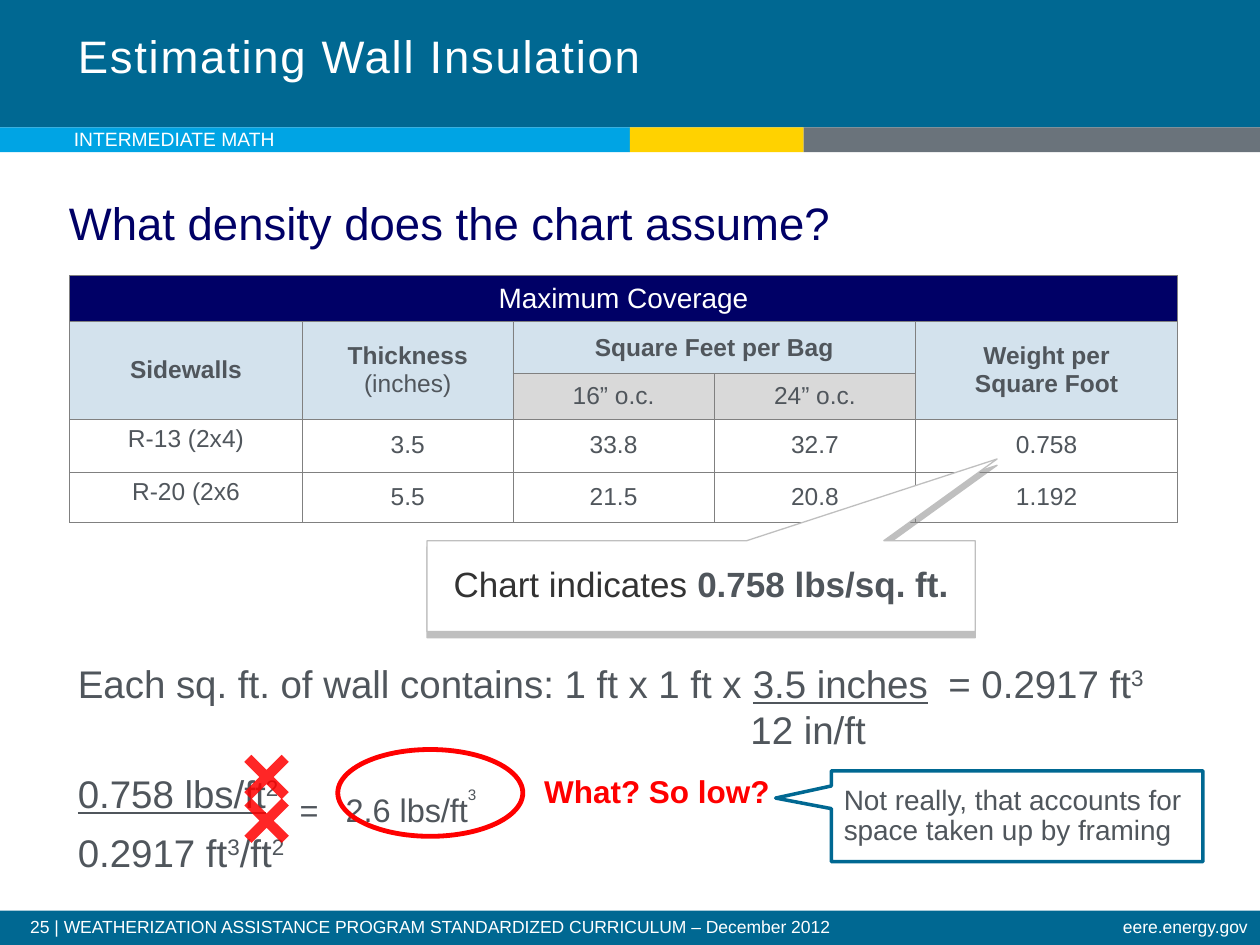
from itertools import accumulate

from lxml.etree import SubElement
from pptx import Presentation
from pptx.dml.color import RGBColor
from pptx.enum.shapes import MSO_SHAPE
from pptx.enum.text import MSO_ANCHOR, PP_ALIGN
from pptx.oxml.ns import qn
from pptx.util import Cm, Pt

TEAL = RGBColor(0x00, 0x68, 0x92)
SKY = RGBColor(0x00, 0xA4, 0xE4)
YELLOW = RGBColor(0xFF, 0xD2, 0x00)
SLATE = RGBColor(0x6A, 0x73, 0x7B)
NAVY = RGBColor(0x00, 0x00, 0x66)
STEEL = RGBColor(0x52, 0x8F, 0xBA)
PALE_GRAY = RGBColor(0xD9, 0xD9, 0xD9)
EDGE_GRAY = RGBColor(0xBF, 0xBF, 0xBF)
MID_GRAY = RGBColor(0x80, 0x80, 0x80)
INK = RGBColor(0x50, 0x56, 0x5C)
DARK = RGBColor(0x33, 0x33, 0x33)
RED = RGBColor(0xFF, 0x00, 0x00)
WHITE = RGBColor(0xFF, 0xFF, 0xFF)

COLUMNS = [4.7, 4.24, 4.06, 4.06, 5.28]
ROWS = [0.91, 1.05, 0.91, 1.07, 1.01]
HEADERS = [  # row, column, last row, last column, text
    (1, 0, 2, 0, "Sidewalls"),
    (1, 1, 2, 1, "Thickness\n(inches)"),
    (1, 2, 1, 3, "Square Feet per Bag"),
    (1, 4, 2, 4, "Weight per\nSquare Foot"),
]
COVERAGE = [
    ("R-13 (2x4)", "3.5", "33.8", "32.7", "0.758"),
    ("R-20 (2x6", "5.5", "21.5", "20.8", "1.192"),
]


def style(span, size, color, bold=False, underline=False, baseline=0):
    """Format a run; baseline is the raise or drop in percent."""
    span.font.name = "Arial"
    span.font.size = Pt(size)
    span.font.color.rgb = color
    span.font.bold = bold
    span.font.underline = underline
    if baseline:
        span.font._element.set("baseline", str(baseline * 1000))


def write(para, *parts):
    """Add runs given as (text, size, color, options)."""
    for text, size, color, options in parts:
        span = para.add_run()
        span.text = text
        style(span, size, color, **options)


def set_alpha(fill_parent, percent):
    color = fill_parent.find(qn("a:solidFill"))[0]
    SubElement(color, qn("a:alpha"), val=str(percent * 1000))


def add_text(slide, place, text, size, color, bold=False, align=PP_ALIGN.LEFT):
    box = slide.shapes.add_textbox(*map(Cm, place))
    box.text_frame.word_wrap = True
    box.text_frame.text = text
    para = box.text_frame.paragraphs[0]
    para.alignment = align
    style(para.runs[0], size, color, bold)
    return box


def add_figure(slide, kind, place, fill=None, line=None, width=1, adjust=()):
    figure = slide.shapes.add_shape(kind, *map(Cm, place))
    figure.shadow.inherit = False
    if fill is None:
        figure.fill.background()
    else:
        figure.fill.solid()
        figure.fill.fore_color.rgb = fill
    if line is None:
        figure.line.fill.background()
    else:
        figure.line.color.rgb = line
        figure.line.width = Pt(width)
    for index, value in enumerate(adjust):
        figure.adjustments[index] = value
    return figure


def add_callout(slide, place, line, width, adjust, align, *parts):
    callout = add_figure(slide, MSO_SHAPE.RECTANGULAR_CALLOUT, place, WHITE,
                         line, width, adjust)
    frame = callout.text_frame
    frame.word_wrap = True
    frame.vertical_anchor = MSO_ANCHOR.MIDDLE
    para = frame.paragraphs[0]
    para.alignment = align
    para.line_spacing = 0.9
    write(para, *parts)
    return callout


def add_drop_shadow(figure):
    effects = figure._element.spPr.find(qn("a:effectLst"))
    shadow = SubElement(effects, qn("a:outerShdw"), blurRad="0",
                        dist=str(Pt(3.6)), dir="5400000", rotWithShape="0")
    color = SubElement(shadow, qn("a:srgbClr"), val=str(MID_GRAY))
    SubElement(color, qn("a:alpha"), val="50000")


def add_tab_stops(para, *stops):
    tabs = SubElement(para._p.get_or_add_pPr(), qn("a:tabLst"))
    for stop in stops:
        SubElement(tabs, qn("a:tab"), pos=str(Cm(stop)), algn="l")


def add_borders(cell):
    properties = cell._tc.get_or_add_tcPr()
    for side in "LRTB":
        border = SubElement(properties, qn(f"a:ln{side}"), w=str(Pt(0.25)))
        solid = SubElement(border, qn("a:solidFill"))
        SubElement(solid, qn("a:srgbClr"), val=str(MID_GRAY))


def fill_cell(cell, text, size=14, color=INK, bold=False, fill=None, alpha=100):
    cell.text_frame.text = text
    cell.vertical_anchor = MSO_ANCHOR.MIDDLE
    for para in cell.text_frame.paragraphs:
        para.alignment = PP_ALIGN.CENTER
        for span in para.runs:
            style(span, size, color, bold and span.text != "(inches)")
    if fill is not None:
        cell.fill.solid()
        cell.fill.fore_color.rgb = fill
        if alpha < 100:
            set_alpha(cell._tc.tcPr, alpha)


def add_coverage_table(slide):
    place = (1.4, 5.55, sum(COLUMNS), sum(ROWS))
    table = slide.shapes.add_table(len(ROWS), len(COLUMNS), *map(Cm, place)).table
    table.first_row = table.horz_banding = False
    for column, width in zip(table.columns, COLUMNS):
        column.width = Cm(width)
    for row, height in zip(table.rows, ROWS):
        row.height = Cm(height)
    for cell in table.iter_cells():
        add_borders(cell)
        cell.fill.background()

    table.cell(0, 0).merge(table.cell(0, 4))
    fill_cell(table.cell(0, 0), "Maximum Coverage", 16, WHITE, fill=NAVY)
    for top, left, bottom, right, text in HEADERS:
        cell = table.cell(top, left)
        if (top, left) != (bottom, right):
            cell.merge(table.cell(bottom, right))
        fill_cell(cell, text, bold=True, fill=STEEL, alpha=25)
    for column, text in enumerate(("16” o.c.", "24” o.c."), 2):
        fill_cell(table.cell(2, column), text, fill=PALE_GRAY)
    for row, values in enumerate(COVERAGE, 3):
        for column, value in enumerate(values):
            fill_cell(table.cell(row, column), value)
        table.cell(row, 0).vertical_anchor = MSO_ANCHOR.TOP


def add_calculation(slide):
    box = slide.shapes.add_textbox(Cm(1.32), Cm(13.18), Cm(22.86), Cm(4.01))
    frame = box.text_frame
    frame.word_wrap = True
    volume, divisor, weight, density = [
        frame.paragraphs[0], *(frame.add_paragraph() for _ in range(3))]

    def part(text, size=22, **options):
        return text, size, INK, options

    add_tab_stops(volume, 17.55)
    write(volume, part("Each sq. ft. of wall contains: 1 ft x 1 ft x "),
          part("3.5 inches", underline=True), part("\t= 0.2917 ft"),
          part("3", baseline=30))
    divisor._p.get_or_add_pPr().set("marL", str(Cm(13.56)))
    write(divisor, part("12 in/ft"))
    add_tab_stops(weight, 4.47, 5.4)
    write(weight, part("0.758 lbs/ft", underline=True), part("2", baseline=30),
          part("\t=\t2.6 lbs/ft", 32, baseline=-25), part("3", 15, baseline=30))
    write(density, part("0.2917 ft"), part("3", baseline=30), part("/ft"),
          part("2", baseline=30))


def add_frame(slide):
    """Draw the header and footer bands with their text."""
    add_figure(slide, MSO_SHAPE.RECTANGLE, (0, 0, 25.4, 2.57), TEAL)
    add_figure(slide, MSO_SHAPE.RECTANGLE, (0, 18.36, 25.4, 0.69), TEAL)
    widths = [12.7, 3.5, 9.2]
    for left, width, color in zip(accumulate([0, *widths]), widths,
                                  (SKY, YELLOW, SLATE)):
        add_figure(slide, MSO_SHAPE.RECTANGLE, (left, 2.57, width, 0.5), color)
    footers = [
        add_text(slide, (0.36, 18.39, 20.24, 0.66),
                 "25 | WEATHERIZATION ASSISTANCE PROGRAM STANDARDIZED CURRICULUM"
                 " – December 2012", 10, WHITE),
        add_text(slide, (15.21, 18.39, 10.19, 0.66), "eere.energy.gov", 10, WHITE,
                 align=PP_ALIGN.RIGHT),
    ]
    for footer in footers:
        footer.text_frame.paragraphs[0].line_spacing = 0.9
    title = add_text(slide, (1.32, 0, 17.32, 2.36), "Estimating Wall Insulation",
                     26, WHITE)
    title.text_frame.vertical_anchor = MSO_ANCHOR.MIDDLE
    para = title.text_frame.paragraphs[0]
    para.line_spacing = Pt(28)
    para.runs[0].font._element.set("spc", "100")
    add_text(slide, (1.24, 2.44, 9.58, 0.86), "INTERMEDIATE MATH", 11, WHITE)


def main():
    deck = Presentation()
    deck.slide_width, deck.slide_height = Cm(25.4), Cm(19.05)
    slide = deck.slides.add_slide(deck.slide_layouts[6])
    add_frame(slide)
    add_calculation(slide)
    add_text(slide, (1.14, 3.81, 23.16, 1.37),
             "What density does the chart assume?", 26, NAVY)
    add_coverage_table(slide)
    indication = add_callout(
        slide, (8.61, 10.9, 11.05, 1.83), EDGE_GRAY, 0.75, (0.54, -1.4),
        PP_ALIGN.CENTER, ("Chart indicates ", 20, DARK, {}),
        ("0.758 lbs/sq. ft.", 20, INK, {"bold": True}))
    add_drop_shadow(indication)
    for top in (14.94, 15.82):
        cross = add_figure(slide, MSO_SHAPE.MATH_MULTIPLY,
                           (4.65, top, 1.45, 1.45), RED, adjust=(0.14,))
        set_alpha(cross._element.spPr, 85)
    add_figure(slide, MSO_SHAPE.OVAL, (6.81, 15.11, 3.73, 1.75), line=RED, width=2.75)
    add_text(slide, (10.72, 15.44, 5.54, 1.02), "What? So low?", 18, RED, bold=True)
    add_callout(slide, (16.76, 15.54, 7.49, 1.83), TEAL, 2, (-0.65, -0.2),
                PP_ALIGN.LEFT,
                ("Not really, that accounts for space taken up by framing", 16, INK, {}))
    deck.save("out.pptx")


if __name__ == "__main__":
    main()
